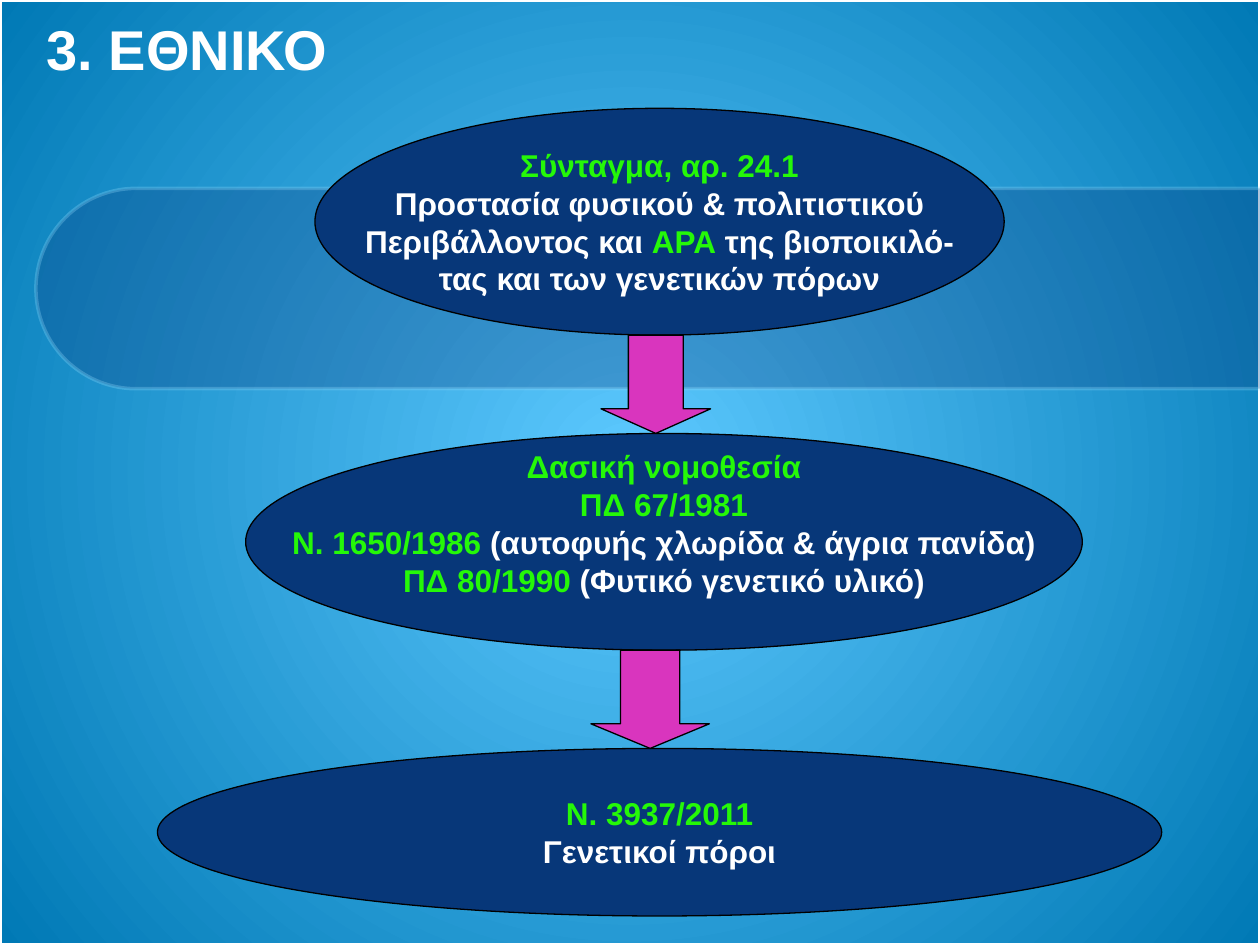
"""Build the slide on the national legal framework as a chain of ellipses and arrows."""
from lxml.etree import SubElement
from pptx import Presentation
from pptx.dml.color import RGBColor
from pptx.enum.shapes import MSO_SHAPE
from pptx.enum.text import MSO_ANCHOR, PP_ALIGN
from pptx.oxml import parse_xml
from pptx.oxml.ns import nsdecls, qn
from pptx.util import Inches, Pt

NAVY, GREEN, WHITE, BLACK, PINK = "073779", "25F808", "FFFFFF", "000000", "D935BE"
PALE, CENTRE, EDGE = "8FD9FB", "5DC9FF", "0079B5"

TITLE = "3. ΕΘΝΙΚΟ"
LAWS = [
    {"box": (2.5, 0.86, 5.47, 1.8), "raise": 0, "lines": [
        [("Σύνταγμα, αρ. 24.1", GREEN)],
        [("Προστασία φυσικού & πολιτιστικού", WHITE)],
        [("Περιβάλλοντος και ", WHITE), ("ΑΡΑ ", GREEN), ("της βιοποικιλό-", WHITE)],
        [("τας και των γενετικών πόρων", WHITE)]]},
    {"box": (1.95, 3.44, 6.64, 1.72), "raise": 0.15, "lines": [
        [("Δασική νομοθεσία", GREEN)],
        [("ΠΔ 67/1981", GREEN)],
        [("Ν. 1650/1986 ", GREEN), ("(αυτοφυής χλωρίδα & άγρια πανίδα)", WHITE)],
        [("ΠΔ 80/1990 ", GREEN), ("(Φυτικό γενετικό υλικό)", WHITE)]]},
    {"box": (1.25, 5.94, 7.97, 1.33), "raise": 0, "lines": [
        [("Ν. 3937/2011", GREEN)],
        [("Γενετικοί πόροι", WHITE)]]},
]
ARROWS = [(4.77, 0.87), (4.69, 0.94)]


def paint(color_format, color):
    color_format.rgb = RGBColor.from_string(color)


def set_alpha(fill, percent):
    solid = fill._xPr.find(qn("a:solidFill"))
    SubElement(solid[0], qn("a:alpha")).set("val", str(percent * 1000))


def style_font(font, size, color):
    font.name, font.size, font.bold = "Arial", Pt(size), True
    paint(font.color, color)


def add_outlined(slide, kind, box, fill, line, width):
    shape = slide.shapes.add_shape(kind, *map(Inches, box))
    shape.shadow.inherit = False
    if fill:
        shape.fill.solid()
        paint(shape.fill.fore_color, fill)
    else:
        shape.fill.background()
    paint(shape.line.color, line)
    shape.line.width = Pt(width)
    return shape


def add_backdrop(slide):
    fill = slide.background.fill
    fill.gradient()
    for stop, color in zip(fill.gradient_stops, (CENTRE, EDGE)):
        paint(stop.color, color)
    linear = slide.background._cSld.find(".//" + qn("a:lin"))
    linear.getparent().replace(linear, parse_xml(
        f'<a:path {nsdecls("a")} path="circle">'
        '<a:fillToRect l="50000" t="50000" r="50000" b="50000"/></a:path>'))
    add_outlined(slide, MSO_SHAPE.RECTANGLE, (0, 0, 10, 7.5), None, WHITE, 2)
    band = add_outlined(slide, MSO_SHAPE.ROUND_2_SAME_RECTANGLE,
                        (4.35, -2.57, 1.59, 9.72), NAVY, PALE, 2)
    band.rotation = 270
    band.adjustments[0] = 0.5
    set_alpha(band.fill, 30)
    set_alpha(band.line.fill, 30)


def add_title(slide):
    title = slide.shapes.title
    title.left, title.top, title.width, title.height = map(Inches, (0.27, 0, 9.4, 0.76))
    frame = title.text_frame
    frame.text = TITLE
    frame.vertical_anchor = MSO_ANCHOR.MIDDLE
    frame.paragraphs[0].alignment = PP_ALIGN.LEFT
    style_font(frame.paragraphs[0].runs[0].font, 32, WHITE)


def add_law(slide, law):
    ellipse = add_outlined(slide, MSO_SHAPE.OVAL, law["box"], NAVY, BLACK, 0.75)
    frame = ellipse.text_frame
    frame.word_wrap = False
    frame.vertical_anchor = MSO_ANCHOR.MIDDLE
    frame.margin_bottom = Inches(0.05 + 2 * law["raise"])
    for index, line in enumerate(law["lines"]):
        paragraph = frame.add_paragraph() if index else frame.paragraphs[0]
        paragraph.alignment = PP_ALIGN.CENTER
        for words, color in line:
            run = paragraph.add_run()
            run.text = words
            style_font(run.font, 18, color)


def add_arrow(slide, upper, lower, left, width):
    top = upper["box"][1] + upper["box"][3]
    box = (left, top, width, lower["box"][1] - top)
    arrow = add_outlined(slide, MSO_SHAPE.DOWN_ARROW, box, PINK, BLACK, 0.75)
    arrow.adjustments[1] = 0.25


def main():
    deck = Presentation()
    deck.slide_width, deck.slide_height = Inches(10), Inches(7.5)
    slide = deck.slides.add_slide(deck.slide_layouts[5])
    add_backdrop(slide)
    add_title(slide)
    for law in LAWS:
        add_law(slide, law)
    for upper, lower, (left, width) in zip(LAWS, LAWS[1:], ARROWS):
        add_arrow(slide, upper, lower, left, width)
    deck.save("out.pptx")


if __name__ == "__main__":
    main()
